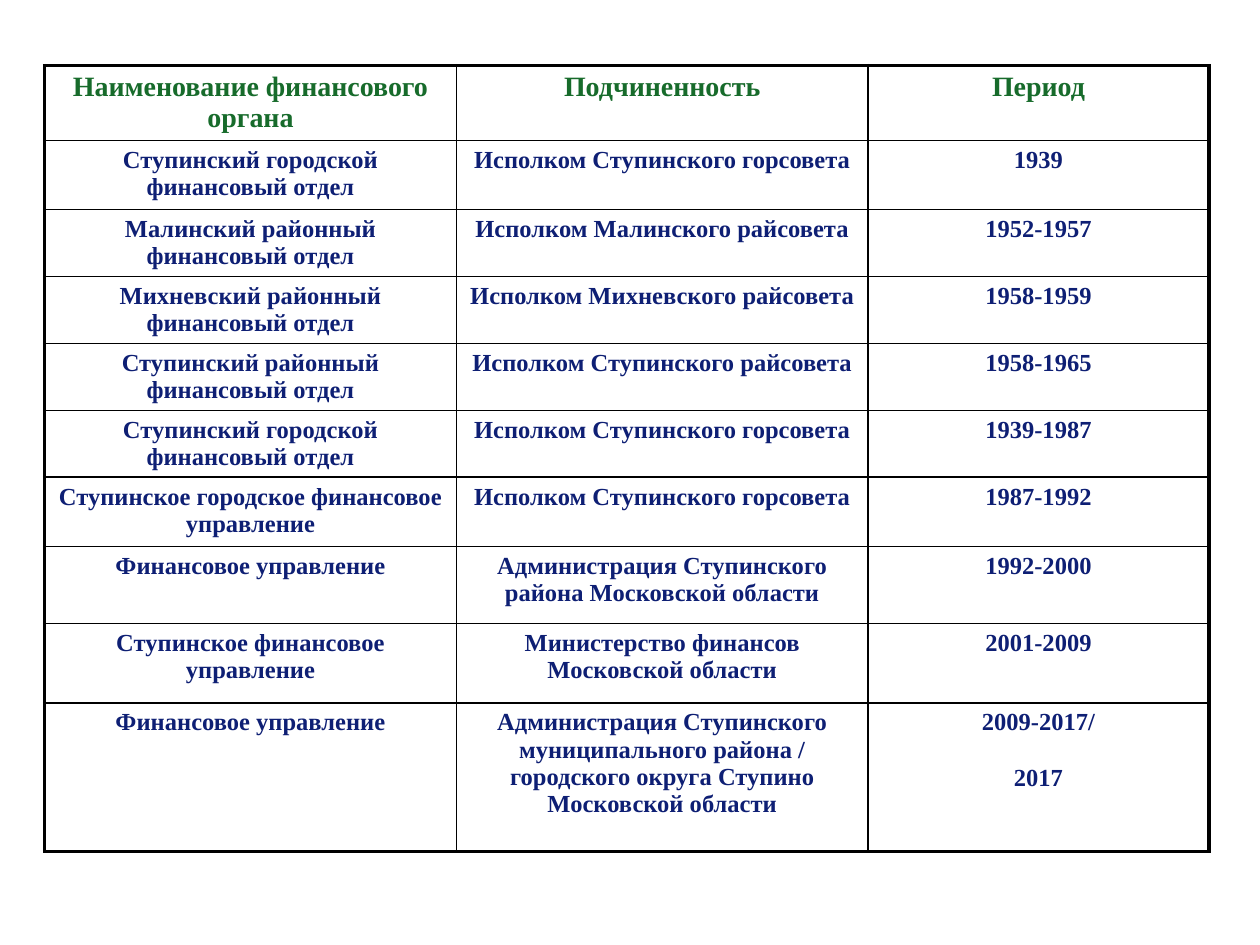
from lxml import etree
from pptx import Presentation
from pptx import util as u
from pptx.dml.color import RGBColor
from pptx.enum import text
from pptx.oxml import ns

GREEN = RGBColor(0x17, 0x6B, 0x2B)
NAVY = RGBColor(0x0E, 0x1F, 0x74)
BLACK = RGBColor(0, 0, 0)
FONT = "Times New Roman"
THIN, THICK = u.Pt(1), u.Pt(2.25)

COLUMN_WIDTHS = (8.3, 8.3, 6.87)
ROW_HEIGHTS = (1.4, 1.4, 1.35, 1.32, 1.27, 1.24, 1.4, 1.55, 1.6, 3)
ROWS = (
    ("Наименование финансового органа", "Подчиненность", "Период"),
    ("Ступинский городской финансовый отдел", "Исполком Ступинского горсовета", "1939"),
    ("Малинский районный финансовый отдел", "Исполком Малинского райсовета", "1952-1957"),
    ("Михневский районный финансовый отдел", "Исполком Михневского райсовета", "1958-1959"),
    ("Ступинский районный финансовый отдел", "Исполком Ступинского райсовета", "1958-1965"),
    ("Ступинский городской финансовый отдел", "Исполком Ступинского горсовета", "1939-1987"),
    ("Ступинское городское финансовое управление", "Исполком Ступинского горсовета", "1987-1992"),
    ("Финансовое управление", "Администрация Ступинского района Московской области", "1992-2000"),
    ("Ступинское финансовое управление", "Министерство финансов Московской области", "2001-2009"),
    (
        "Финансовое управление",
        "Администрация Ступинского муниципального района / "
        "городского округа Ступино Московской области",
        "2009-2017/\n2017",
    ),
)


def set_borders(cell, widths):
    """Draw the left, right, top and bottom borders of a cell."""
    properties = cell._tc.get_or_add_tcPr()
    for index, (side, width) in enumerate(zip("LRTB", widths)):
        line = etree.Element(ns.qn(f"a:ln{side}"), w=str(int(width)))
        fill = etree.SubElement(line, ns.qn("a:solidFill"))
        etree.SubElement(fill, ns.qn("a:srgbClr"), val=str(BLACK))
        properties.insert(index, line)


def write_cell(cell, content, size, color):
    """Write centred bold text into an unfilled cell."""
    cell.fill.background()
    cell.text_frame.text = content
    for index, paragraph in enumerate(cell.text_frame.paragraphs):
        paragraph.alignment = text.PP_ALIGN.CENTER
        if index:
            paragraph.space_before = u.Pt(16)
        for span in paragraph.runs:
            span.font.name = FONT
            span.font.size = u.Pt(size)
            span.font.bold = True
            span.font.color.rgb = color


def add_history_table(page):
    """Add the table of financial bodies with a thick outer frame."""
    frame = page.shapes.add_table(
        len(ROWS), len(COLUMN_WIDTHS), u.Cm(0.9), u.Cm(1.32),
        u.Cm(sum(COLUMN_WIDTHS)), u.Cm(sum(ROW_HEIGHTS)),
    )
    table = frame.table
    table.first_row = table.horz_banding = False
    for column, width in zip(table.columns, COLUMN_WIDTHS):
        column.width = u.Cm(width)
    last_row, last_column = len(ROWS) - 1, len(COLUMN_WIDTHS) - 1
    for row, contents in enumerate(ROWS):
        table.rows[row].height = u.Cm(ROW_HEIGHTS[row])
        size, color = (14, NAVY) if row else (16, GREEN)
        for column, content in enumerate(contents):
            cell = table.cell(row, column)
            write_cell(cell, content, size, color)
            outer = (column == 0, column == last_column, row == 0, row == last_row)
            set_borders(cell, [THICK if edge else THIN for edge in outer])


def main():
    """Build the deck and save it."""
    deck = Presentation()
    deck.slide_width, deck.slide_height = u.Cm(25.4), u.Cm(19.05)
    page = deck.slides.add_slide(deck.slide_layouts[6])
    add_history_table(page)
    deck.save("out.pptx")


if __name__ == "__main__":
    main()
